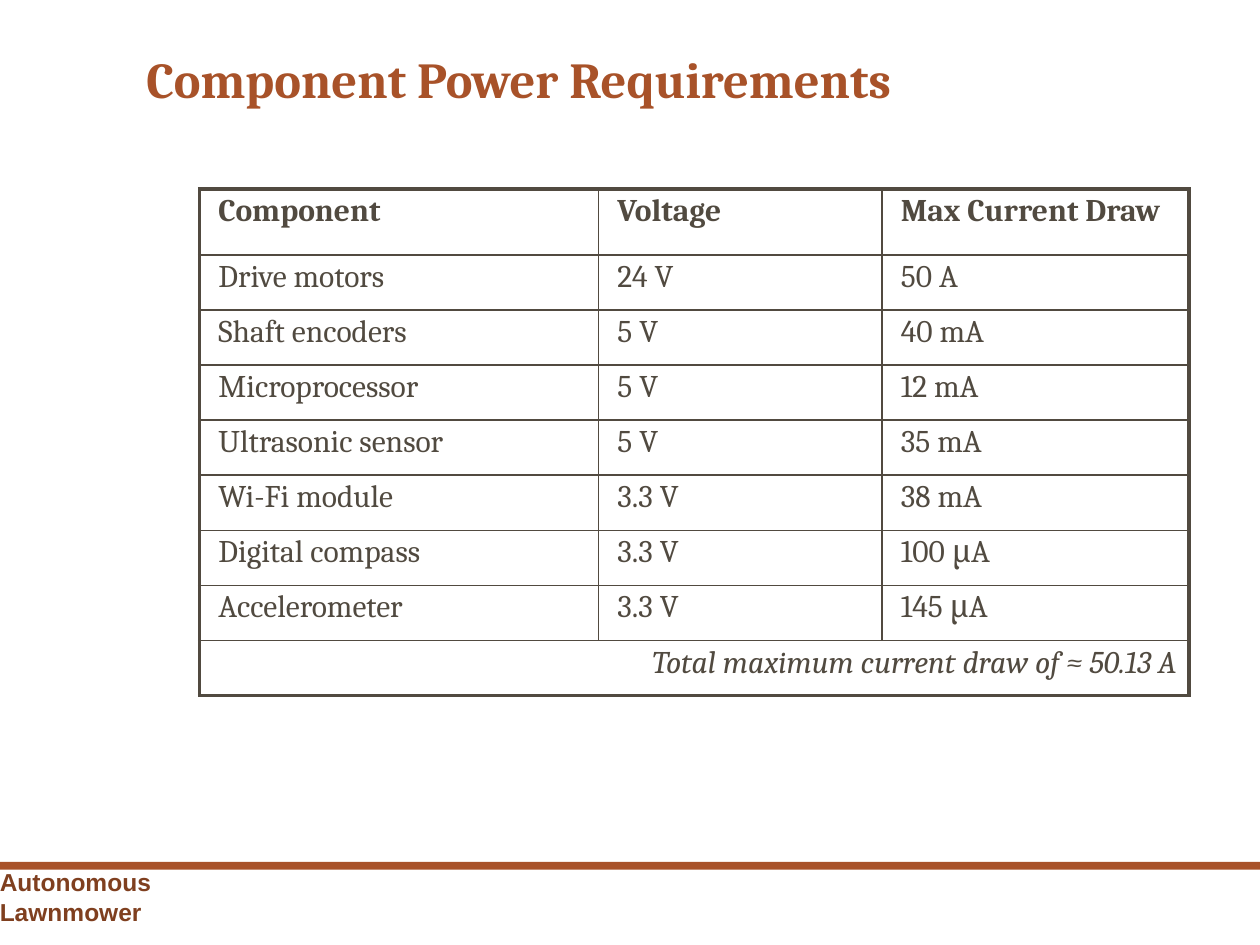
"""Build the component power requirements slide."""

from lxml.etree import SubElement
from pptx import Presentation
from pptx.dml.color import RGBColor
from pptx.enum.shapes import MSO_SHAPE
from pptx.enum.text import MSO_ANCHOR, PP_ALIGN
from pptx.oxml.ns import qn
from pptx.util import Pt

TITLE = "Component Power Requirements"
PROJECT = "Autonomous Lawnmower"
ROWS = [
    ("Component", "Voltage", "Max Current Draw"),
    ("Drive motors", "24 V", "50 A"),
    ("Shaft encoders", "5 V", "40 mA"),
    ("Microprocessor", "5 V", "12 mA"),
    ("Ultrasonic sensor", "5 V", "35 mA"),
    ("Wi-Fi module", "3.3 V", "38 mA"),
    ("Digital compass", "3.3 V", "100 μA"),
    ("Accelerometer", "3.3 V", "145 μA"),
]
TOTAL = "Total maximum current draw of ≈ 50.13 A"

RUST = RGBColor(0xA8, 0x52, 0x29)
BROWN = RGBColor(0x7F, 0x3F, 0x1F)
INK = RGBColor(0x51, 0x4A, 0x40)

COLUMN_WIDTHS = (228, 162, 175.5)
HEADER_HEIGHT, ROW_HEIGHT = 37.6, 31.5
TABLE_LEFT, TABLE_TOP = 114, 108
THICK, THIN = 2.25, 1


def add_run(paragraph, text, size, color, font="Cambria", bold=False, italic=False):
    run = paragraph.add_run()
    run.text = text
    run.font.name, run.font.size = font, Pt(size)
    run.font.bold, run.font.italic = bold, italic
    run.font.color.rgb = color


def set_borders(cell, widths):
    properties = cell._tc.get_or_add_tcPr()
    for side, width in zip("LRTB", widths):
        line = SubElement(properties, qn(f"a:ln{side}"))
        if width is None:
            SubElement(line, qn("a:noFill"))
            continue
        line.set("w", str(Pt(width)))
        fill = SubElement(line, qn("a:solidFill"))
        SubElement(fill, qn("a:srgbClr")).set("val", str(INK))
    cell.fill.background()


def write_cell(cell, text, **style):
    paragraph = cell.text_frame.paragraphs[0]
    paragraph._p.get_or_add_pPr().set("marL", str(Pt(3.6)))
    paragraph.line_spacing = 0.9
    add_run(paragraph, text, 18, INK, **style)
    return paragraph


def add_title(slide):
    title = slide.shapes.title
    title.left, title.top, title.width, title.height = Pt(76.5), Pt(30), Pt(595.5), Pt(36)
    title.text_frame.vertical_anchor = MSO_ANCHOR.BOTTOM
    paragraph = title.text_frame.paragraphs[0]
    paragraph.alignment = PP_ALIGN.LEFT
    paragraph.line_spacing = 0.9
    add_run(paragraph, TITLE, 28.8, RUST, bold=True)


def add_footer(slide):
    bar = slide.shapes.add_shape(MSO_SHAPE.RECTANGLE, 0, Pt(492.5), Pt(720), Pt(4.5))
    bar.shadow.inherit = False
    bar.fill.solid()
    bar.fill.fore_color.rgb = RUST
    bar.line.fill.background()
    label = slide.shapes.add_textbox(Pt(-7.2), Pt(492), Pt(177), Pt(24))
    label.text_frame.word_wrap = True
    add_run(label.text_frame.paragraphs[0], PROJECT, 14, BROWN, "Arial", bold=True)


def add_power_table(slide):
    last_row, last_column = len(ROWS), len(COLUMN_WIDTHS) - 1
    height = HEADER_HEIGHT + last_row * ROW_HEIGHT
    table = slide.shapes.add_table(
        last_row + 1, last_column + 1, Pt(TABLE_LEFT), Pt(TABLE_TOP),
        Pt(sum(COLUMN_WIDTHS)), Pt(height),
    ).table
    table.first_row = table.horz_banding = False
    for column, width in zip(table.columns, COLUMN_WIDTHS):
        column.width = Pt(width)
    for index, row in enumerate(table.rows):
        row.height = Pt(ROW_HEIGHT if index else HEADER_HEIGHT)

    total = table.cell(last_row, 0)
    total.merge(table.cell(last_row, last_column))
    for r in range(last_row + 1):
        inner = None if r == last_row else THIN
        for c in range(last_column + 1):
            cell = table.cell(r, c)
            end = c + cell.span_width - 1 if cell.is_merge_origin else c
            set_borders(cell, (
                THICK if c == 0 else inner,
                THICK if end == last_column else inner,
                THICK if r == 0 else THIN,
                THICK if r == last_row else THIN,
            ))
            if r < last_row:
                write_cell(cell, ROWS[r][c], bold=r == 0)
    write_cell(total, TOTAL, italic=True).alignment = PP_ALIGN.RIGHT


def main():
    presentation = Presentation()
    presentation.slide_width, presentation.slide_height = Pt(720), Pt(540)
    slide = presentation.slides.add_slide(presentation.slide_layouts[5])
    add_footer(slide)
    add_title(slide)
    add_power_table(slide)
    presentation.save("out.pptx")


if __name__ == "__main__":
    main()
